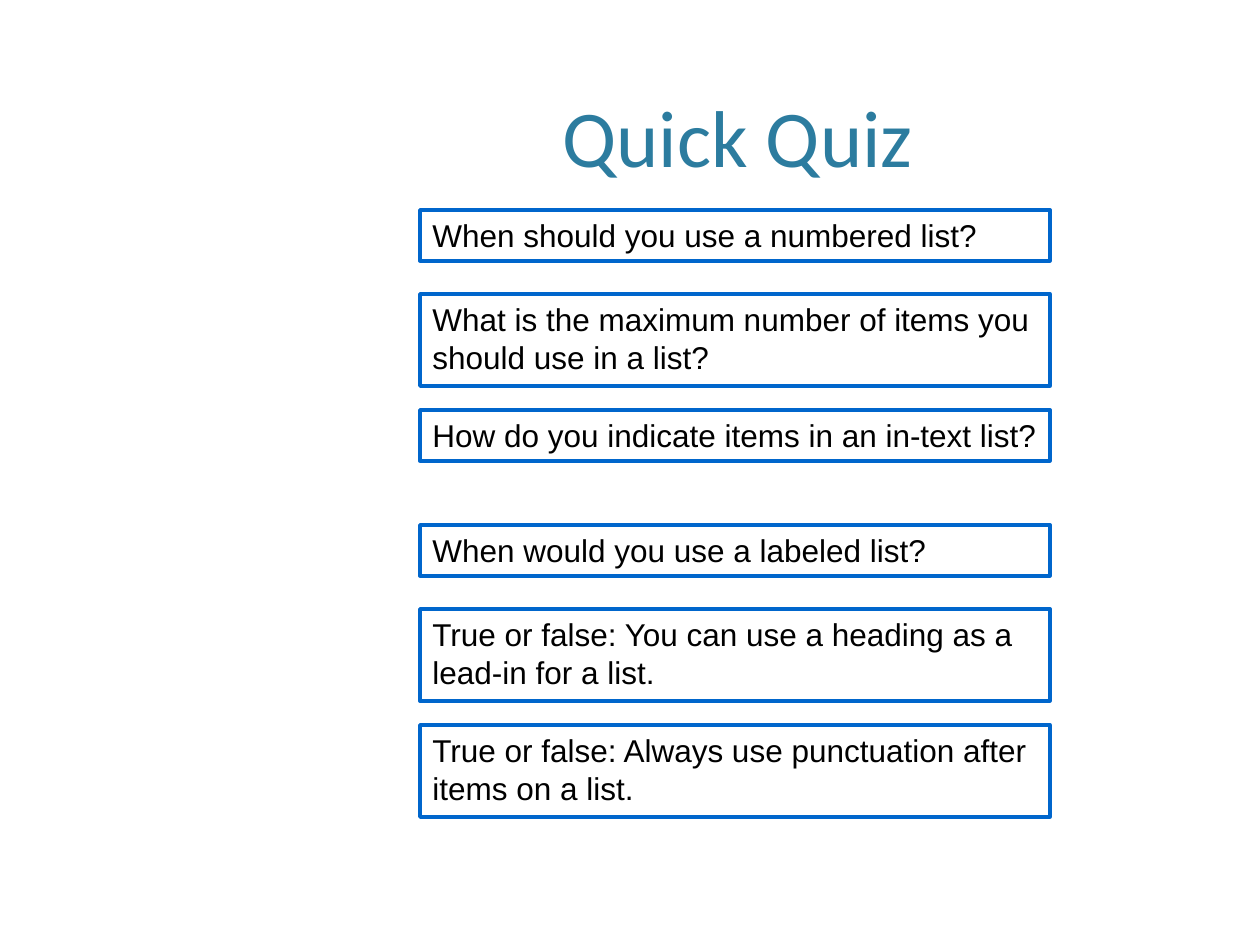
from pptx import Presentation
from pptx.dml.color import RGBColor
from pptx.enum.shapes import MSO_SHAPE as Shape
from pptx.enum.text import MSO_ANCHOR as Anchor, PP_ALIGN as Align
from pptx.util import Pt

EMU_PER_PX = 914400 // 126
SLIDE_SIZE = (1260, 945)
WHITE = RGBColor(0xFF, 0xFF, 0xFF)
BLACK = RGBColor(0x00, 0x00, 0x00)
BLUE = RGBColor(0x00, 0x66, 0xCC)
TEAL = RGBColor(0x2C, 0x7C, 0x9F)

TITLE = "Quick Quiz"
TITLE_BOX = (220, 6, 1035, 184)
TITLE_FONT = {"name": "Calibri", "size": Pt(46)}
QUESTION_FONT = {"name": "Arial", "size": Pt(18)}
QUESTION_LEFT, QUESTION_WIDTH = 420, 630
HEIGHT_BY_LINES = {1: 51, 2: 92}
QUESTIONS = [
    (210, 1, "When should you use a numbered list?"),
    (294, 2, "What is the maximum number of items you should use in a list?"),
    (410, 1, "How do you indicate items in an in-text list?"),
    (525, 1, "When would you use a labeled list?"),
    (609, 2, "True or false: You can use a heading as a lead-in for a list."),
    (725, 2, "True or false: Always use punctuation after items on a list."),
]


def px(*lengths):
    """Turn pixel lengths into EMU."""
    return [length * EMU_PER_PX for length in lengths]


def write_text(shape, text, anchor, alignment, font, color):
    """Put one formatted paragraph into a shape."""
    frame = shape.text_frame
    frame.word_wrap = True
    frame.vertical_anchor = anchor
    paragraph = frame.paragraphs[0]
    paragraph.alignment = alignment
    run = paragraph.add_run()
    run.text = text
    for name, value in font.items():
        setattr(run.font, name, value)
    run.font.color.rgb = color


def add_question(slide, top, lines, text):
    """Add one outlined question box."""
    box = px(QUESTION_LEFT, top, QUESTION_WIDTH, HEIGHT_BY_LINES[lines])
    shape = slide.shapes.add_shape(Shape.RECTANGLE, *box)
    shape.shadow.inherit = False
    shape.fill.solid()
    shape.fill.fore_color.rgb = WHITE
    shape.line.color.rgb = BLUE
    shape.line.width = Pt(2)
    write_text(shape, text, Anchor.TOP, Align.LEFT, QUESTION_FONT, BLACK)


def main():
    """Build the quiz slide."""
    presentation = Presentation()
    presentation.slide_width, presentation.slide_height = px(*SLIDE_SIZE)
    slide = presentation.slides.add_slide(presentation.slide_layouts[6])
    title = slide.shapes.add_textbox(*px(*TITLE_BOX))
    write_text(title, TITLE, Anchor.BOTTOM, Align.CENTER, TITLE_FONT, TEAL)
    for question in QUESTIONS:
        add_question(slide, *question)
    presentation.save("out.pptx")


if __name__ == "__main__":
    main()
